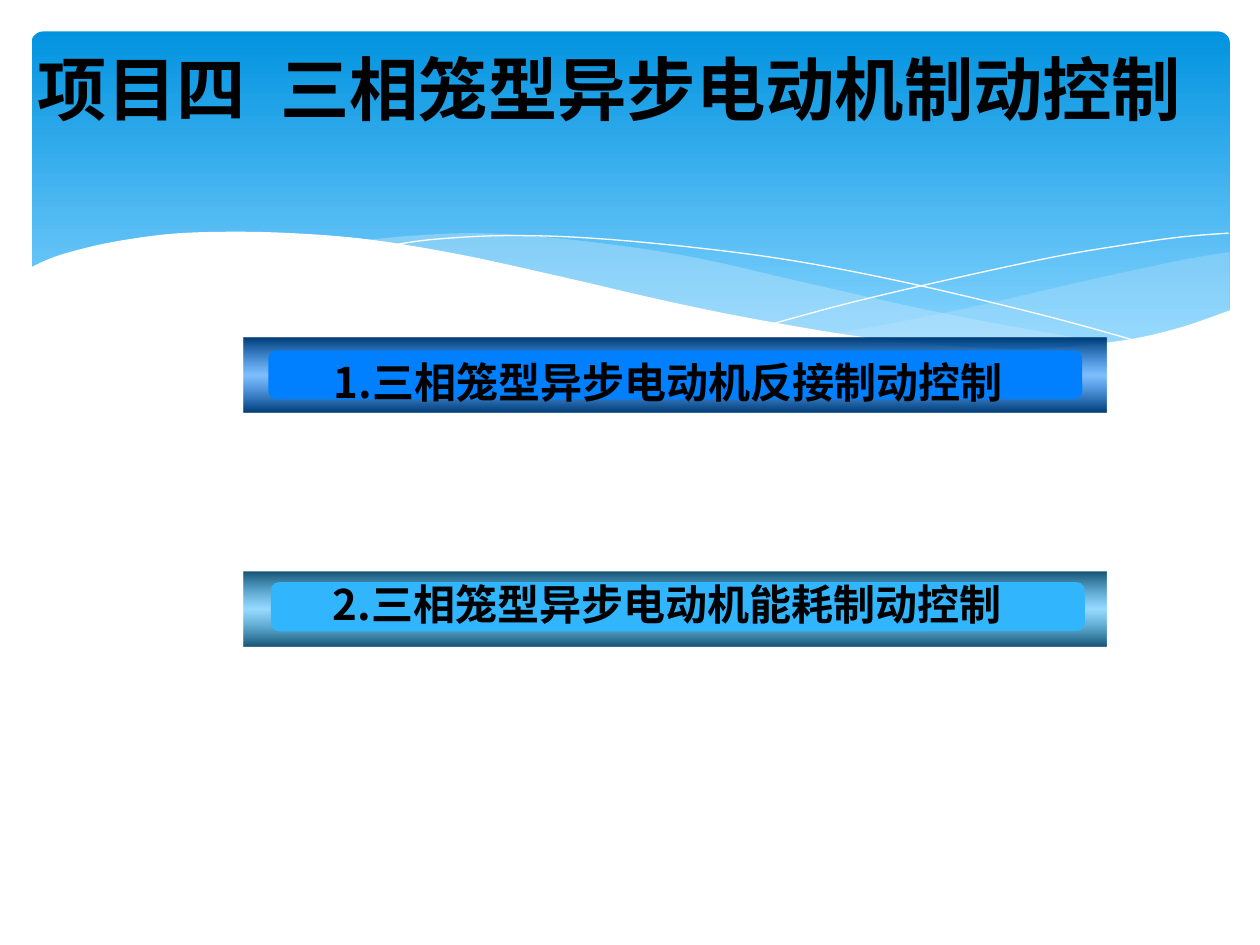
import pptx
import pptx.dml.color
import pptx.enum.shapes
import pptx.enum.text
import pptx.oxml
import pptx.oxml.ns
import pptx.util
from lxml import etree

Inches = pptx.util.Inches
SHAPES = pptx.enum.shapes.MSO_SHAPE
CJK_FONT = "Noto Sans CJK SC"
COLORS = {
    "banner_top": "0293E0", "banner_bottom": "83D3FE", "wave": "C6E7FC",
    "white": "FFFFFF", "black": "000000",
    "blue": "0080FF", "blue_edge": "003B75",
    "sky": "31B6FD", "sky_edge": "175474",
}

TITLE = "项目四\u2002三相笼型异步电动机制动控制"

# Text, colour, top of bar, panel (left, top), text box (left, top, width, height)
BARS = [
    ("2.三相笼型异步电动机能耗制动控制", "sky", 4.54, (2.15, 4.62), (2.46, 4.54, 5.98, 0.5)),
    ("1.三相笼型异步电动机反接制动控制", "blue", 2.68, (2.13, 2.78), (2.47, 2.78, 6.08, 0.91)),
]
BAR_LEFT, BAR_SIZE, PANEL_SIZE = 1.93, (6.85, 0.59), (6.46, 0.39)

# Each wave is a chain of smooth curves given by their key points
WAVES = [
    ([[(9.76, 2), (9.35, 2.07), (8.61, 2.23), (7.79, 2.42), (7.06, 2.57), (6.61, 2.65)],
      [(6.61, 2.65), (7.05, 2.71), (7.57, 2.76), (8.14, 2.78), (8.72, 2.74), (9.21, 2.65),
       (9.49, 2.57), (9.76, 2.47)]], 29),
    ([[(8.93, 2.73), (8.37, 2.65), (7.41, 2.47), (6.29, 2.22), (5.69, 2.08), (5.14, 1.98),
       (4.42, 1.89), (3.8, 1.85), (3.28, 1.87), (2.86, 1.91)],
      [(2.86, 1.91), (3.42, 1.99), (4.04, 2.11), (4.49, 2.22), (5.3, 2.4), (6.01, 2.55),
       (6.65, 2.66), (7.22, 2.74), (7.73, 2.77), (8.18, 2.78), (8.57, 2.77), (8.93, 2.73)]], 40),
]
SWOOSHES = [
    [(3.09, 1.95), (3.44, 1.9), (4.01, 1.87), (4.69, 1.89), (5.56, 1.97), (6.36, 2.08),
     (7.27, 2.26), (8.31, 2.51), (9.07, 2.72)],
    [(6.13, 2.57), (6.72, 2.41), (7.48, 2.23), (8.36, 2.04), (8.95, 1.94), (9.38, 1.88), (9.75, 1.85)],
]
WHITE_EDGE = [
    (9.77, 2.46), (9.4, 2.59), (8.99, 2.69), (8.5, 2.75), (8.09, 2.77), (7.61, 2.75),
    (6.88, 2.68), (6.03, 2.54), (5.29, 2.39), (4.47, 2.2), (3.65, 2.02), (2.92, 1.9),
    (2.3, 1.85), (1.77, 1.84), (1.32, 1.86), (0.85, 1.93), (0.46, 2.03), (0.23, 2.13),
]


def smooth(points, steps=5):
    """Return points along a Catmull-Rom curve through the key points."""
    padded = [points[0], *points, points[-1]]
    curve = [points[0]]
    for a, b, c, d in zip(padded, padded[1:], padded[2:], padded[3:]):
        for step in range(1, steps + 1):
            t = step / steps
            curve.append(tuple(
                q + t * (r - p) / 2 + t * t * (2 * p - 5 * q + 4 * r - s) / 2
                + t ** 3 * (3 * q - p - 3 * r + s) / 2
                for p, q, r, s in zip(a, b, c, d)))
    return curve


def rgb(name):
    return pptx.dml.color.RGBColor.from_string(COLORS[name])


def fill_solid(shape, color, alpha=100):
    shape.fill.solid()
    shape.fill.fore_color.rgb = rgb(color)
    if alpha < 100:
        node = shape._element.spPr.find(".//" + pptx.oxml.ns.qn("a:srgbClr"))
        etree.SubElement(node, pptx.oxml.ns.qn("a:alpha"), val=str(alpha * 1000))


def fill_vertical(shape, stops):
    """Fill top to bottom with (position, colour, alpha) stops, in percent."""
    shape.fill.gradient()
    shape.fill.gradient_angle = 270
    stop_list = shape._element.spPr.find(".//" + pptx.oxml.ns.qn("a:gsLst"))
    for stop in list(stop_list):
        stop_list.remove(stop)
    for position, color, alpha in stops:
        stop = etree.SubElement(stop_list, pptx.oxml.ns.qn("a:gs"), pos=str(position * 1000))
        node = etree.SubElement(stop, pptx.oxml.ns.qn("a:srgbClr"), val=COLORS[color])
        if alpha < 100:
            etree.SubElement(node, pptx.oxml.ns.qn("a:alpha"), val=str(alpha * 1000))


def add_plain_shape(shapes, kind, left, top, size, corner=None):
    shape = shapes.add_shape(kind, *map(Inches, (left, top, *size)))
    shape.shadow.inherit = False
    shape.line.fill.background()
    if corner is not None:
        shape.adjustments[0] = corner
    return shape


def add_outline(shapes, points, close):
    start, *rest = [(Inches(x), Inches(y)) for x, y in points]
    builder = shapes.build_freeform(*start)
    builder.add_line_segments(rest, close=close)
    shape = builder.convert_to_shape()
    shape.shadow.inherit = False
    if close:
        shape.line.fill.background()
    else:
        shape.fill.background()
    return shape


def set_font(paragraph, latin, size):
    font = paragraph.font
    font.name, font.size, font.bold = latin, pptx.util.Pt(size), True
    font.color.rgb = rgb("black")
    latin_node = font._element.find(pptx.oxml.ns.qn("a:latin"))
    east_asian = etree.Element(pptx.oxml.ns.qn("a:ea"), typeface=CJK_FONT)
    latin_node.addnext(east_asian)


def add_banner(shapes):
    banner = add_plain_shape(shapes, SHAPES.ROUNDED_RECTANGLE, 0.25, 0.25, (9.51, 2.7), 0.034)
    fill_vertical(banner, [(0, "banner_top", 100), (90, "banner_bottom", 100)])
    for curves, alpha in WAVES:
        points = [point for curve in curves for point in smooth(curve)]
        fill_solid(add_outline(shapes, points, True), "wave", alpha)
    for points in SWOOSHES:
        swoosh = add_outline(shapes, smooth(points), False)
        swoosh.line.color.rgb = rgb("white")
        swoosh.line.width = 0
    bottom_corners = [(0.23, 3.29), (9.77, 3.29)]
    fill_solid(add_outline(shapes, smooth(WHITE_EDGE) + bottom_corners, True), "white")


def add_title(slide):
    title = slide.shapes.title
    slide.shapes._spTree.append(title._element)  # in front of the banner
    title.left, title.top, title.width, title.height = map(Inches, (0.2, 0.36, 9.61, 0.67))
    frame = title.text_frame
    frame.text = TITLE
    frame.auto_size = pptx.enum.text.MSO_AUTO_SIZE.NONE
    frame.vertical_anchor = pptx.enum.text.MSO_ANCHOR.MIDDLE
    frame.paragraphs[0].alignment = pptx.enum.text.PP_ALIGN.LEFT
    set_font(frame.paragraphs[0], "Cabin", 39.6)


def add_bar(slide, text, color, top, panel_at, text_at):
    group = slide.shapes.add_group_shape().shapes
    bar = add_plain_shape(group, SHAPES.RECTANGLE, BAR_LEFT, top, BAR_SIZE)
    edge = color + "_edge"
    fill_vertical(bar, [(0, edge, 100), (50, color, 50), (100, edge, 100)])
    fill_solid(add_plain_shape(group, SHAPES.ROUNDED_RECTANGLE, *panel_at, PANEL_SIZE, 0.167), color)
    frame = group.add_textbox(*map(Inches, text_at)).text_frame
    frame.word_wrap = True
    frame.margin_left = Inches(0.18)
    frame.text = text
    set_font(frame.paragraphs[0], CJK_FONT, 24)


def main():
    presentation = pptx.Presentation()
    presentation.slide_width, presentation.slide_height = Inches(10), Inches(7.5)
    slide = presentation.slides.add_slide(presentation.slide_layouts[5])
    add_banner(slide.shapes)
    add_title(slide)
    for bar in BARS:
        add_bar(slide, *bar)
    presentation.save("out.pptx")


if __name__ == "__main__":
    main()
